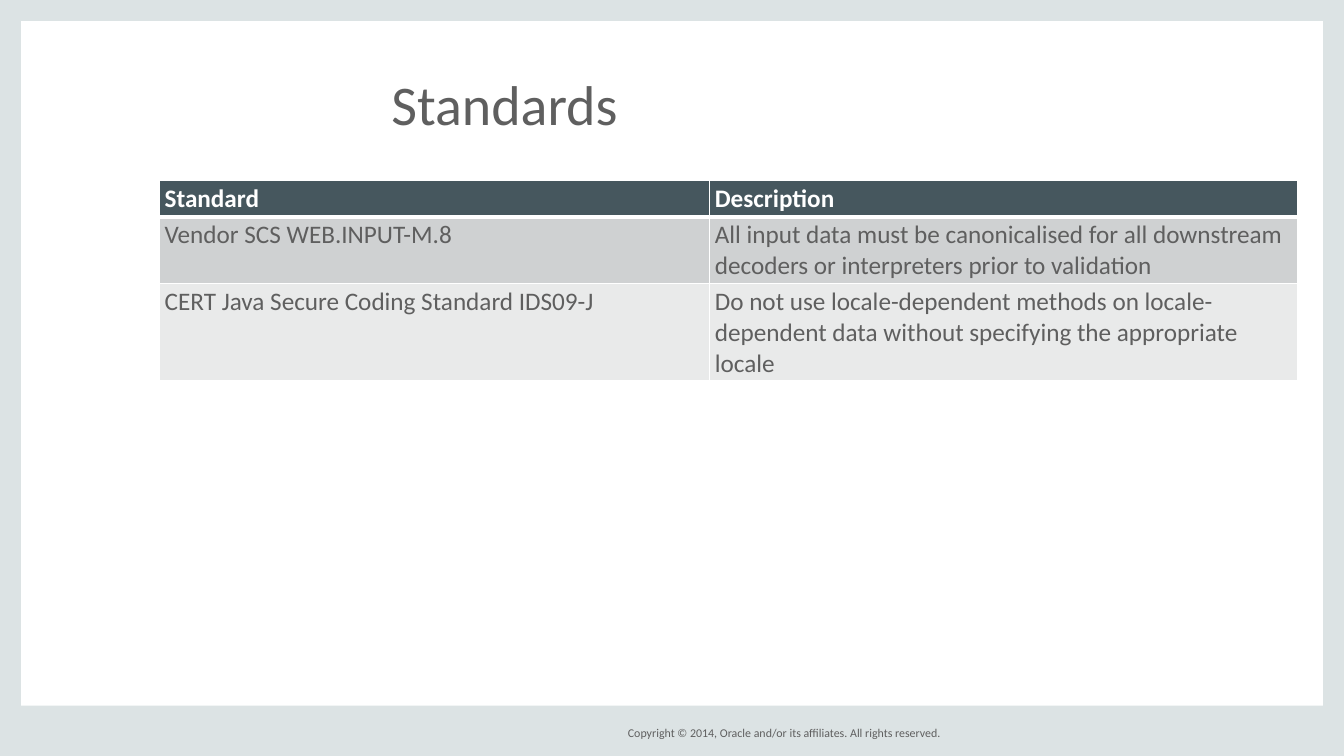
from dataclasses import dataclass

import lxml.etree
import pptx
import pptx.dml.color
import pptx.enum.shapes
import pptx.enum.text
import pptx.oxml.ns
import pptx.util

# Grid: 160 columns by 90 rows of square cells
COLUMNS, ROWS = 160, 90
CELL = pptx.util.Inches(7.5) / ROWS
FONT = "Calibri"
GREY, WHITE, FRAME = "5F5F5F", "FFFFFF", "DCE3E4"


@dataclass
class Area:
    column: float
    row: float
    columns: float
    rows: float

    def emu(self) -> tuple[int, ...]:
        return tuple(grid(n) for n in (self.column, self.row, self.columns, self.rows))


@dataclass
class StandardRow:
    texts: tuple[str, str]
    rows: float
    fill: str
    color: str = GREY
    bold: bool = False
    rule_above: float = 1
    rule_below: float = 1


def grid(cells: float) -> int:
    return round(cells * CELL)


def rgb(value: str) -> pptx.dml.color.RGBColor:
    return pptx.dml.color.RGBColor.from_string(value)


def set_margins(target, side: float, end: float) -> None:
    """Set margins, in inches, of a text frame or table cell."""
    target.margin_left = target.margin_right = pptx.util.Inches(side)
    target.margin_top = target.margin_bottom = pptx.util.Inches(end)


def write(frame, text: str, size: float, color: str, bold: bool = False,
          align=pptx.enum.text.PP_ALIGN.LEFT) -> None:
    frame.text = text
    paragraph = frame.paragraphs[0]
    paragraph.alignment = align
    font = paragraph.runs[0].font
    font.name, font.size, font.bold = FONT, pptx.util.Pt(size), bold
    font.color.rgb = rgb(color)


def add_band(slide, area: Area) -> None:
    band = slide.shapes.add_shape(pptx.enum.shapes.MSO_SHAPE.RECTANGLE, *area.emu())
    band.shadow.inherit = False
    band.fill.solid()
    band.fill.fore_color.rgb = rgb(FRAME)
    band.line.fill.background()


def add_borders(cell, above: float, below: float) -> None:
    properties = cell._tc.get_or_add_tcPr()
    widths = {"lnL": 1, "lnR": 1, "lnT": above, "lnB": below}
    for position, (side, points) in enumerate(widths.items()):
        line = lxml.etree.Element(pptx.oxml.ns.qn(f"a:{side}"), w=str(pptx.util.Pt(points)))
        fill = lxml.etree.SubElement(line, pptx.oxml.ns.qn("a:solidFill"))
        lxml.etree.SubElement(fill, pptx.oxml.ns.qn("a:srgbClr"), val=WHITE)
        properties.insert(position, line)


def add_standards(slide, area: Area, widths: list[float], entries: list[StandardRow]) -> None:
    table = slide.shapes.add_table(len(entries), len(widths), *area.emu()).table
    table.horz_banding = False
    for column, width in zip(table.columns, widths):
        column.width = grid(width)
    for row, entry in zip(table.rows, entries):
        row.height = grid(entry.rows)
        for cell, text in zip(row.cells, entry.texts):
            set_margins(cell, 0.05, 0.03)
            cell.fill.solid()
            cell.fill.fore_color.rgb = rgb(entry.fill)
            write(cell.text_frame, text, 18, entry.color, entry.bold)
            add_borders(cell, entry.rule_above, entry.rule_below)


FRAME_BANDS = [
    Area(0, 0, 2.5, ROWS),
    Area(COLUMNS - 2.5, 0, 2.5, ROWS),
    Area(0, 84, COLUMNS, 6),
    Area(0, 0, COLUMNS, 2.5),
]
STANDARDS = [
    StandardRow(("Standard", "Description"), 4.2, "46575E", WHITE, True, rule_below=3),
    StandardRow(("Vendor SCS WEB.INPUT-M.8",
                 "All input data must be canonicalised for all downstream "
                 "decoders or interpreters prior to validation"),
                7.8, "CFD1D2", rule_above=3),
    StandardRow(("CERT Java Secure Coding Standard IDS09-J",
                 "Do not use locale-dependent methods on locale-dependent data "
                 "without specifying the appropriate locale"),
                11.4, "E9EAEA"),
]


def main() -> None:
    deck = pptx.Presentation()
    deck.slide_width, deck.slide_height = grid(COLUMNS), grid(ROWS)
    slide = deck.slides.add_slide(deck.slide_layouts[5])

    # Frame around the slide
    for area in FRAME_BANDS:
        add_band(slide, area)

    # Copyright line
    copyright_line = slide.shapes.add_textbox(*Area(70.5, 86, 41.5, 2.4).emu()).text_frame
    set_margins(copyright_line, 0, 0)
    copyright_line.word_wrap = False
    copyright_line.vertical_anchor = pptx.enum.text.MSO_ANCHOR.MIDDLE
    write(copyright_line, "Copyright © 2014, Oracle and/or its affiliates. All rights reserved.",
          8.5, GREY, align=pptx.enum.text.PP_ALIGN.RIGHT)

    # Title
    title = slide.shapes.title
    title.left, title.top, title.width, title.height = Area(46, 8, 55.5, 8.6).emu()
    heading = title.text_frame
    set_margins(heading, 0.05, 0.02)
    heading.word_wrap = True
    heading.auto_size = pptx.enum.text.MSO_AUTO_SIZE.SHAPE_TO_FIT_TEXT
    heading.vertical_anchor = pptx.enum.text.MSO_ANCHOR.TOP
    write(heading, "Standards", 40, GREY)

    # Table of standards
    add_standards(slide, Area(19, 21.5, 135.5, 23.4), [65.5, 70], STANDARDS)

    deck.save("out.pptx")


if __name__ == "__main__":
    main()
